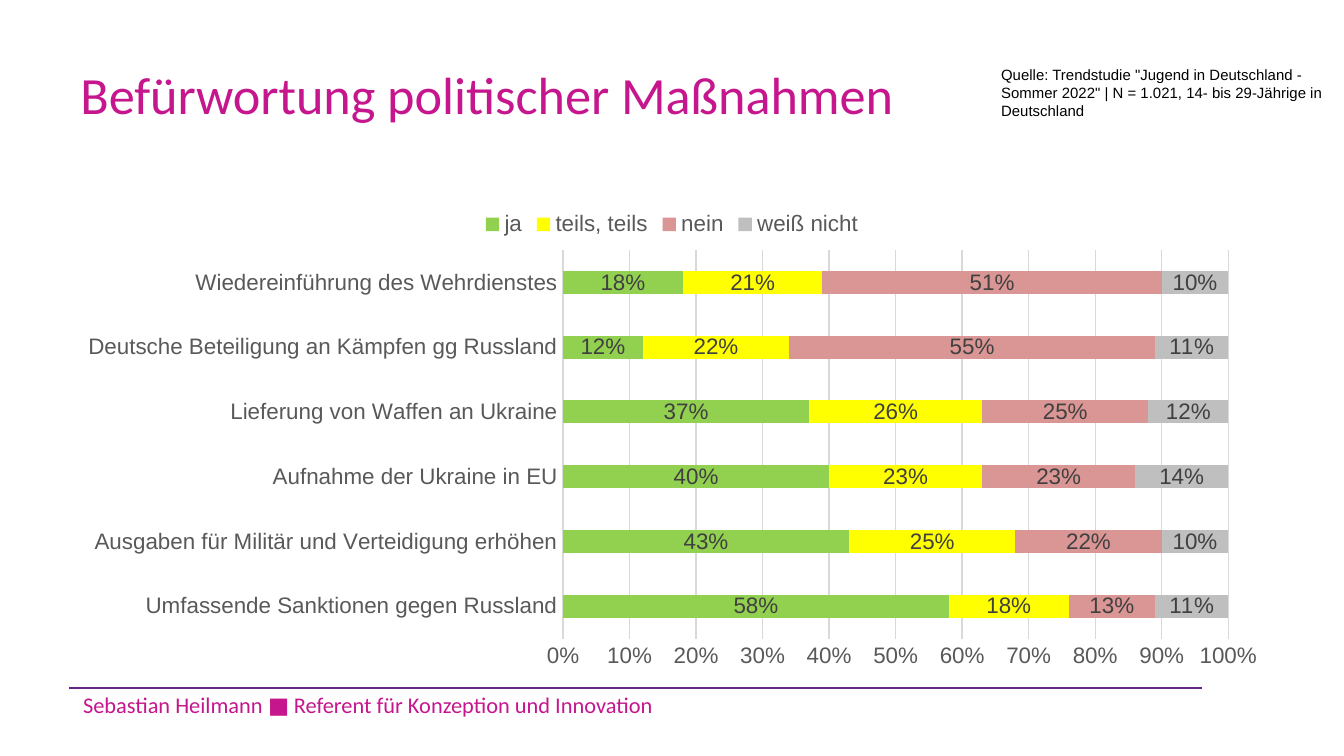
from lxml.etree import SubElement
from pptx import Presentation
from pptx.chart.data import CategoryChartData
from pptx.dml.color import RGBColor
from pptx.enum.chart import XL_CHART_TYPE, XL_LEGEND_POSITION, XL_TICK_MARK
from pptx.enum.shapes import MSO_CONNECTOR
from pptx.enum.text import MSO_ANCHOR
from pptx.oxml import parse_xml
from pptx.oxml.ns import nsdecls, qn
from pptx.util import Cm, Pt

HUES = {
    "pink": "C6168D", "rule": "672686", "black": "000000",
    "text": "595959", "label": "404040", "grid": "D9D9D9",
    "ja": "92D050", "teils, teils": "FFFF00",
    "nein": "D99694", "weiß nicht": "BFBFBF",
}
ROWS = {
    "Umfassende Sanktionen gegen Russland": (0.58, 0.18, 0.13, 0.11),
    "Ausgaben für Militär und Verteidigung erhöhen": (0.43, 0.25, 0.22, 0.1),
    "Aufnahme der Ukraine in EU": (0.4, 0.23, 0.23, 0.14),
    "Lieferung von Waffen an Ukraine": (0.37, 0.26, 0.25, 0.12),
    "Deutsche Beteiligung an Kämpfen gg Russland": (0.12, 0.22, 0.55, 0.11),
    "Wiedereinführung des Wehrdienstes": (0.18, 0.21, 0.51, 0.1),
}
NAMES = ("ja", "teils, teils", "nein", "weiß nicht")
AREA = {"x": 0.41, "y": 0.11, "w": 0.55, "h": 0.81}


def apply(item, form):
    for key, value in form.items():
        setattr(item, key, value)


class Deck:
    """Holds the style and the current slide."""

    def __init__(self, wide, high):
        self.show = Presentation()
        apply(self.show, {"slide_width": Cm(wide), "slide_height": Cm(high)})
        self.slide = self.show.slides.add_slide(self.show.slide_layouts[6])

    def color(self, name):
        return RGBColor.from_string(HUES[name])

    def font(self, font, face, size, hue):
        apply(font, {"name": face, "size": Pt(size), "bold": False})
        font.color.rgb = self.color(hue)

    def stroke(self, line, hue, width):
        line.color.rgb = self.color(hue)
        line.width = Pt(width)

    def text(self, words, box, face, size, hue, anchor=MSO_ANCHOR.MIDDLE):
        frame = self.slide.shapes.add_textbox(*map(Cm, box)).text_frame
        apply(frame, {"word_wrap": True, "vertical_anchor": anchor, "text": words})
        self.font(frame.paragraphs[0].runs[0].font, face, size, hue)

    def rule(self, left, top, right):
        ends = map(Cm, (left, top, right, top))
        line = self.slide.shapes.add_connector(MSO_CONNECTOR.STRAIGHT, *ends)
        self.stroke(line.line, "rule", 1)
        SubElement(line._element.spPr, qn("a:effectLst"))

    def area(self, chart):
        plot = chart._chartSpace.find(".//" + qn("c:plotArea"))
        for old in plot.findall(qn("c:layout")):
            plot.remove(old)
        modes = "".join(f'<c:{key}Mode val="edge"/>' for key in "xy")
        sizes = "".join(f'<c:{key} val="{val}"/>' for key, val in AREA.items())
        plot.insert(0, parse_xml(
            f'<c:layout {nsdecls("c")}><c:manualLayout><c:layoutTarget val="inner"/>'
            f"{modes}{sizes}</c:manualLayout></c:layout>"))

    def axis(self, axis, form):
        marks = {"major_tick_mark": XL_TICK_MARK.NONE, "minor_tick_mark": XL_TICK_MARK.NONE}
        apply(axis, marks | form)
        self.font(axis.tick_labels.font, "Arial", 12, "text")

    def chart(self, box):
        data = CategoryChartData(number_format="0%")
        data.categories = list(ROWS)
        for name, vals in zip(NAMES, zip(*ROWS.values())):
            data.add_series(name, vals)
        kind = XL_CHART_TYPE.BAR_STACKED_100
        chart = self.slide.shapes.add_chart(kind, *map(Cm, box), data).chart
        apply(chart, {"has_title": False, "has_legend": True})
        self.font(chart.font, "Arial", 10, "black")
        apply(chart.legend, {"position": XL_LEGEND_POSITION.TOP, "include_in_layout": False})
        self.font(chart.legend.font, "Arial", 12, "text")

        cats, vals = chart.category_axis, chart.value_axis
        self.axis(cats, {"has_major_gridlines": False})
        self.stroke(cats.format.line, "grid", 0.75)
        self.axis(vals, {"has_major_gridlines": True, "major_unit": 0.1,
                         "minimum_scale": 0, "maximum_scale": 1})
        self.stroke(vals.major_gridlines.format.line, "grid", 0.75)
        vals.format.line.fill.background()
        percent = {"number_format": "0%", "number_format_is_linked": False}
        apply(vals.tick_labels, percent)

        plot = chart.plots[0]
        apply(plot, {"gap_width": 182, "overlap": 100, "vary_by_categories": False})
        for part in plot.series:
            part.format.fill.solid()
            part.format.fill.fore_color.rgb = self.color(part.name)
            apply(part.data_labels, percent | {"show_value": True})
            self.font(part.data_labels.font, "Arial", 12, "label")
        self.area(chart)


def main():
    deck = Deck(25.4, 14.29)
    deck.text("Sebastian Heilmann ■ Referent für Konzeption und Innovation",
              (1.32, 12.9, 12.98, 0.84), "Calibri", 12, "pink")
    deck.rule(1.3, 13, 22.71)
    deck.text("Befürwortung politischer Maßnahmen",
              (1.27, 0.58, 22.86, 2.39), "Calibri", 28, "pink")
    deck.chart((1.27, 3.73, 22.86, 9.07))
    deck.text('Quelle: Trendstudie "Jugend in Deutschland - Sommer 2022" '
              "| N = 1.021, 14- bis 29-Jährige in Deutschland",
              (18.67, 1.12, 6.73, 1.27), "Arial", 8, "black", MSO_ANCHOR.TOP)
    deck.show.save("out.pptx")


if __name__ == "__main__":
    main()
